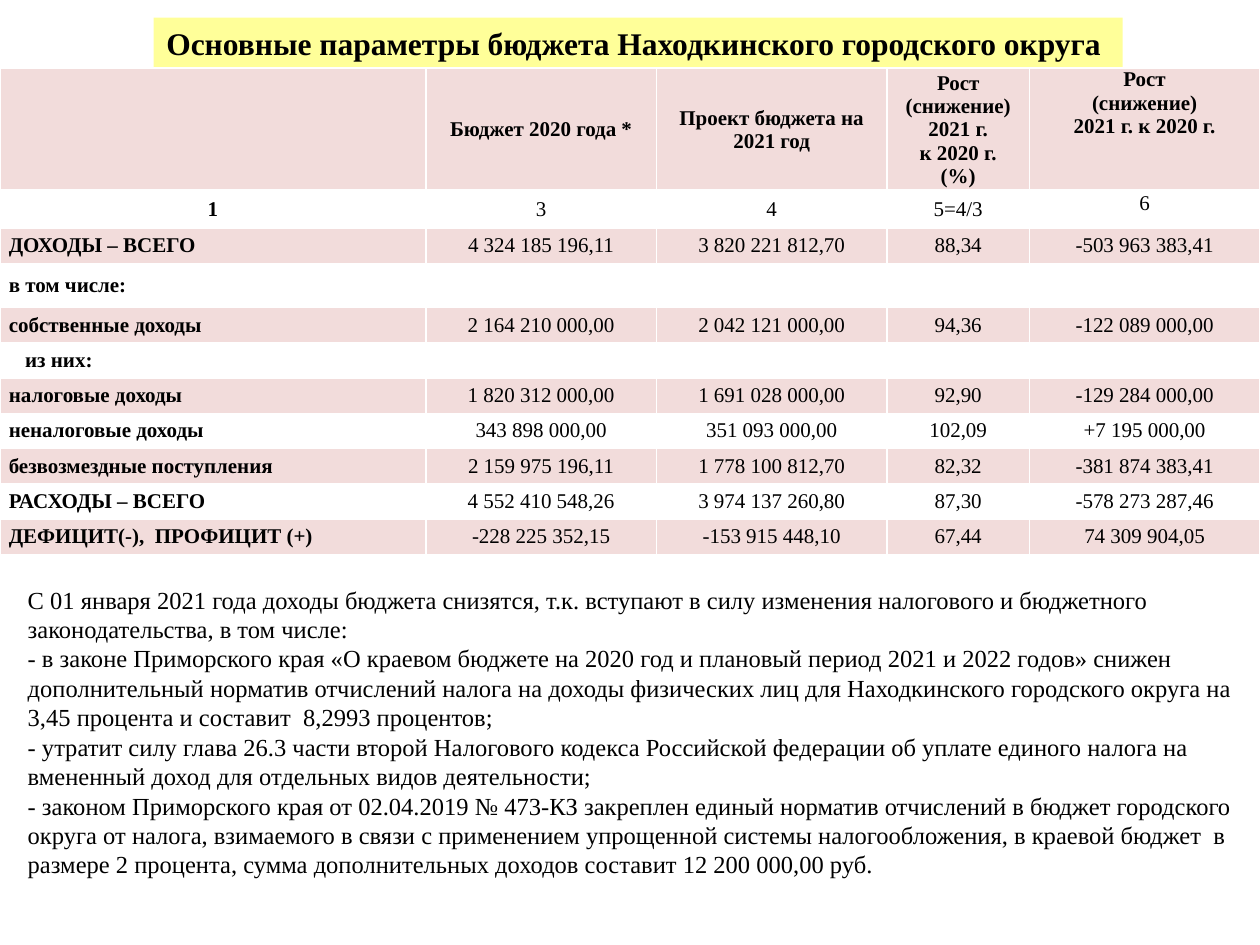
import pptx
import pptx.util
import pptx.dml.color
import pptx.enum.text
import pptx.oxml
import pptx.oxml.ns

COLORS = {"ink": "000000", "paper": "FFFFFF", "title": "FFFF99", "band": "F2DCDB"}
ALIGN = pptx.enum.text.PP_ALIGN
ANCHOR = pptx.enum.text.MSO_ANCHOR

TITLE = "Основные параметры бюджета Находкинского городского округа"

HEADINGS = [
    [],
    ["Бюджет 2020 года *"],
    ["Проект бюджета на 2021 год"],
    ["Рост (снижение) 2021 г.", "к 2020 г.", "(%)"],
    ["Рост", "(снижение)", "2021 г. к 2020 г."],
]
ROWS = [
    ["1", "3", "4", "5=4/3", "6"],
    ["ДОХОДЫ – ВСЕГО", "4 324 185 196,11", "3 820 221 812,70", "88,34", "-503 963 383,41"],
    ["в том числе:", "", "", "", ""],
    ["собственные доходы", "2 164 210 000,00", "2 042 121 000,00", "94,36", "-122 089 000,00"],
    ["из них:", "", "", "", ""],
    ["налоговые доходы", "1 820 312 000,00", "1 691 028 000,00", "92,90", "-129 284 000,00"],
    ["неналоговые доходы", "343 898 000,00", "351 093 000,00", "102,09", "+7 195 000,00"],
    ["безвозмездные поступления", "2 159 975 196,11", "1 778 100 812,70", "82,32", "-381 874 383,41"],
    ["РАСХОДЫ – ВСЕГО", "4 552 410 548,26", "3 974 137 260,80", "87,30", "-578 273 287,46"],
    ["ДЕФИЦИТ(-),  ПРОФИЦИТ (+)", "-228 225 352,15", "-153 915 448,10", "67,44", "74 309 904,05"],
]
COLUMN_WIDTHS = [33.8, 18.3, 18.3, 11.3, 18.3]
ROW_HEIGHTS = [9.8, 2.9, 2.8, 3.5] + [2.8] * 7

NOTES = [
    "С 01 января 2021 года доходы бюджета снизятся, т.к. вступают в силу изменения "
    "налогового и бюджетного законодательства, в том числе:",
    "- в законе Приморского края «О краевом бюджете на 2020 год и плановый период 2021 и "
    "2022 годов» снижен дополнительный норматив отчислений налога на доходы физических лиц "
    "для Находкинского городского округа на 3,45 процента и составит  8,2993 процентов;",
    "- утратит силу глава 26.3 части второй Налогового кодекса Российской федерации об "
    "уплате единого налога на вмененный доход для отдельных видов деятельности;",
    "- законом Приморского края от 02.04.2019 № 473-КЗ закреплен единый норматив отчислений "
    "в бюджет городского округа от налога, взимаемого в связи с применением упрощенной "
    "системы налогообложения, в краевой бюджет  в размере 2 процента, сумма дополнительных "
    "доходов составит 12 200 000,00 руб.",
]


class BudgetSlide:
    """Style and current slide; lengths are cells of a 100 by 75 grid."""

    font = "Times New Roman"

    def __init__(self, deck):
        self.unit = deck.slide_width / 100
        self.slide = deck.slides.add_slide(deck.slide_layouts[1])

    def length(self, cells):
        return pptx.util.Emu(round(cells * self.unit))

    def place(self, box, *area):
        box.left, box.top, box.width, box.height = map(self.length, area)

    def paint(self, item, color):
        item.fill.solid()
        item.fill.fore_color.rgb = pptx.dml.color.RGBColor.from_string(COLORS[color])

    def add_lines(self, frame, lines, size, bold=False, align=ALIGN.LEFT):
        for index, line in enumerate(lines):
            para = frame.paragraphs[0] if index == 0 else frame.add_paragraph()
            para.alignment = align
            para.space_before = pptx.util.Pt(0)
            span = para.add_run()
            span.text = line
            span.font.name = self.font
            span.font.size = pptx.util.Pt(size)
            span.font.bold = bold
            span.font.color.rgb = pptx.dml.color.RGBColor.from_string(COLORS["ink"])

    def title(self, text, *area):
        box = self.slide.shapes.title
        self.place(box, *area)
        self.paint(box, "title")
        frame = box.text_frame
        frame.word_wrap = False
        frame.auto_size = pptx.enum.text.MSO_AUTO_SIZE.NONE
        frame.vertical_anchor = ANCHOR.TOP
        self.add_lines(frame, [text], 18, bold=True)

    def body(self, lines, *area):
        box = self.slide.placeholders[1]
        self.place(box, *area)
        frame = box.text_frame
        frame.word_wrap = True
        frame.auto_size = pptx.enum.text.MSO_AUTO_SIZE.NONE
        self.add_lines(frame, lines, 14)
        for para in frame.paragraphs:
            props = para._p.get_or_add_pPr()
            props.set("marL", "0")
            props.set("indent", "0")
            props.append(pptx.oxml.parse_xml(
                f'<a:buNone {pptx.oxml.ns.nsdecls("a")}/>'))

    def border(self, cell, bottom):
        props = cell._tc.get_or_add_tcPr()
        for index, side in enumerate("LRTB"):
            width = pptx.util.Pt(bottom if side == "B" else 1)
            props.insert(index, pptx.oxml.parse_xml(
                f'<a:ln{side} {pptx.oxml.ns.nsdecls("a")} w="{width}"><a:solidFill>'
                f'<a:srgbClr val="{COLORS["paper"]}"/></a:solidFill></a:ln{side}>'))

    def cell(self, cell, lines, row, column):
        cell.margin_left = cell.margin_right = self.length(0.7)
        cell.margin_top = cell.margin_bottom = 0
        top_aligned = column == 4 and row < 2
        cell.vertical_anchor = ANCHOR.TOP if top_aligned else ANCHOR.MIDDLE
        self.paint(cell, "paper" if row % 2 else "band")
        self.border(cell, bottom=1 if row else 3)
        label = column == 0 and row > 1
        self.add_lines(cell.text_frame, lines or [""], 12, bold=row == 0 or column == 0,
                       align=ALIGN.JUSTIFY if label else ALIGN.CENTER)

    def table(self, headings, rows, widths, heights, left, top):
        table = self.slide.shapes.add_table(
            len(heights), len(widths), *map(self.length, (left, top, sum(widths), sum(heights)))
        ).table
        table.first_row = table.horz_banding = False
        for column, width in zip(table.columns, widths):
            column.width = self.length(width)
        for row, height in zip(table.rows, heights):
            row.height = self.length(height)
        content = [headings] + [[[text] for text in row] for row in rows]
        for row, cells in enumerate(content):
            for column, lines in enumerate(cells):
                self.cell(table.cell(row, column), lines, row, column)
        return table


def main():
    deck = pptx.Presentation()
    deck.slide_width = pptx.util.Inches(10)
    deck.slide_height = pptx.util.Inches(7.5)
    page = BudgetSlide(deck)

    # Heading
    page.title(TITLE, 12.2, 1.4, 76.9, 4)

    # Explanation under the table
    page.body(NOTES, 1.2, 45.9, 98.8, 29)

    # Budget figures, with the "of which" row indented
    table = page.table(HEADINGS, ROWS, COLUMN_WIDTHS, ROW_HEIGHTS, 0, 5.4)
    table.cell(5, 0).margin_left = page.length(2)

    deck.save("out.pptx")


if __name__ == "__main__":
    main()
